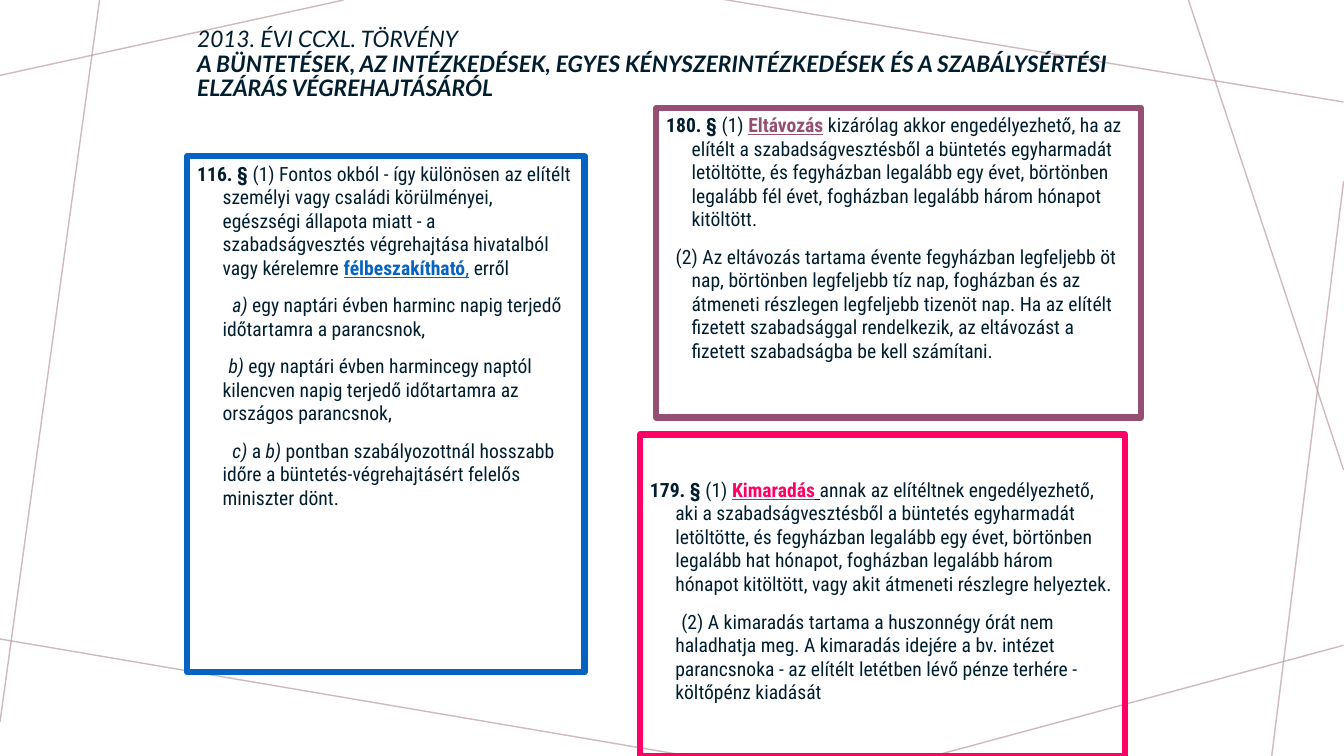
import pptx
import pptx.dml.color
import pptx.enum.shapes
import pptx.enum.text
import pptx.util
from lxml import etree
from pptx.oxml.ns import qn
from pptx.util import Cm

INK, BLUE, PLUM, PINK, ROSE = "001E2E", "0563C1", "954F72", "FF0066", "BA9CA0"
HANGING = 0.64

BACKGROUND_LINES = [
    (8.66, 0, 0, 1.9),
    (2.51, 0, 0, 18.19),
    (17.35, 19.05, -0.13, 16.08),
    (33.86, 16.26, 23.52, 19.05),
    (33.86, 4.57, 32.05, 19.05),
    (33.86, 11.84, 29.95, 0),
    (33.86, 2.57, 18.14, -0.03),
]


def rgb(color):
    return pptx.dml.color.RGBColor.from_string(color)


def add_run(p, text, font="Roboto Condensed", size=14, color=INK,
            bold=False, italic=False, underline=False):
    r = p.add_run()
    r.text = text
    f = r.font
    f.name, f.size, f.color.rgb = font, pptx.util.Pt(size), rgb(color)
    f.bold, f.italic, f.underline = bold, italic, underline


def add_background_line(s, x1, y1, x2, y2):
    line = s.shapes.add_connector(pptx.enum.shapes.MSO_CONNECTOR.STRAIGHT,
                                  Cm(x1), Cm(y1), Cm(x2), Cm(y2))
    line.line.color.rgb = rgb(ROSE)
    line.line.width = pptx.util.Pt(1)
    sp_pr = line._element.spPr
    etree.SubElement(sp_pr.find(".//" + qn("a:srgbClr")), qn("a:alpha"), val="70000")
    etree.SubElement(sp_pr, qn("a:effectLst"))


def add_title(s, first_line, act_name):
    sp = s.shapes.add_textbox(Cm(4.72), Cm(0.53), Cm(23.6), Cm(2.21))
    tf = sp.text_frame
    tf.word_wrap = True
    tf.vertical_anchor = pptx.enum.text.MSO_ANCHOR.MIDDLE
    p = tf.paragraphs[0]
    p.line_spacing = 0.9
    add_run(p, first_line, font="Lato", size=16.2, italic=True)
    p.add_line_break()
    add_run(p, act_name, font="Lato", size=16.2, italic=True, bold=True)


def add_section_box(s, left, top, width, height, color, paragraphs, inset_top=0.13):
    """Each paragraph is a first-line indent in cm and a list of (text, format) runs."""
    sp = s.shapes.add_shape(pptx.enum.shapes.MSO_SHAPE.RECTANGLE,
                            Cm(left), Cm(top), Cm(width), Cm(height))
    sp.shadow.inherit = False
    sp.fill.background()
    sp.line.color.rgb = rgb(color)
    sp.line.width = pptx.util.Pt(4.5)
    tf = sp.text_frame
    tf.word_wrap = True
    tf.vertical_anchor = pptx.enum.text.MSO_ANCHOR.TOP
    tf.margin_top = Cm(inset_top)
    for i, (indent, runs) in enumerate(paragraphs):
        p = tf.add_paragraph() if i else tf.paragraphs[0]
        p.alignment = pptx.enum.text.PP_ALIGN.LEFT
        p.space_before = pptx.util.Pt(10 if i else 0)
        p_pr = p._p.get_or_add_pPr()
        p_pr.set("marL", str(Cm(HANGING)))
        p_pr.set("indent", str(Cm(indent)))
        for text, style in runs:
            add_run(p, text, **style)


def main():
    prs = pptx.Presentation()
    prs.slide_width, prs.slide_height = Cm(33.87), Cm(19.05)
    s = prs.slides.add_slide(prs.slide_layouts[6])
    for ends in BACKGROUND_LINES:
        add_background_line(s, *ends)

    add_title(s, "2013. ÉVI CCXL. TÖRVÉNY",
              "A BÜNTETÉSEK, AZ INTÉZKEDÉSEK, EGYES KÉNYSZERINTÉZKEDÉSEK "
              "ÉS A SZABÁLYSÉRTÉSI ELZÁRÁS VÉGREHAJTÁSÁRÓL")

    plain, bold, italic = {}, {"bold": True}, {"italic": True}
    add_section_box(s, 4.72, 3.94, 10.01, 13, BLUE, [
        (-HANGING, [
            ("116. §", bold),
            (" (1) Fontos okból - így különösen az elítélt személyi vagy családi "
             "körülményei, egészségi állapota miatt - a szabadságvesztés "
             "végrehajtása hivatalból vagy kérelemre ", plain),
            ("félbeszakítható", {"color": BLUE, "bold": True, "underline": True}),
            (",", {"color": BLUE, "underline": True}),
            (" erről", plain)]),
        (0.25, [
            ("a) ", italic),
            ("egy naptári évben harminc napig terjedő időtartamra a parancsnok,", plain)]),
        (0.15, [
            ("b) ", italic),
            ("egy naptári évben harmincegy naptól kilencven napig terjedő "
             "időtartamra az országos parancsnok,", plain)]),
        (0.25, [
            ("c) ", italic),
            ("a", plain),
            (" b) ", italic),
            ("pontban szabályozottnál hosszabb időre a büntetés-végrehajtásért "
             "felelős miniszter dönt.", plain)]),
    ])
    add_section_box(s, 16.54, 2.72, 12.22, 7.8, PLUM, [
        (-HANGING, [
            ("180. §", bold),
            (" (1) ", plain),
            ("Eltávozás", {"color": PLUM, "bold": True, "underline": True}),
            (" kizárólag akkor engedélyezhető, ha az elítélt a szabadságvesztésből "
             "a büntetés egyharmadát letöltötte, és fegyházban legalább egy évet, "
             "börtönben legalább fél évet, fogházban legalább három hónapot "
             "kitöltött.", plain)]),
        (-0.4, [
            ("(2) Az eltávozás tartama évente fegyházban legfeljebb öt nap, "
             "börtönben legfeljebb tíz nap, fogházban és az átmeneti részlegen "
             "legfeljebb tizenöt nap. Ha az elítélt fizetett szabadsággal "
             "rendelkezik, az eltávozást a fizetett szabadságba be kell "
             "számítani.", plain)]),
    ])
    add_section_box(s, 16.13, 10.95, 12.22, 8.1, PINK, [
        (-HANGING, [
            ("179. §", bold),
            (" (1) ", plain),
            ("Kimaradás", {"color": PINK, "bold": True, "underline": True}),
            (" ", {"bold": True, "underline": True}),
            ("annak az elítéltnek engedélyezhető, aki a szabadságvesztésből a "
             "büntetés egyharmadát letöltötte, és fegyházban legalább egy évet, "
             "börtönben legalább hat hónapot, fogházban legalább három hónapot "
             "kitöltött, vagy akit átmeneti részlegre helyeztek.", plain)]),
        (0.15, [
            ("(2) A kimaradás tartama a huszonnégy órát nem haladhatja meg. "
             "A kimaradás idejére a bv. intézet parancsnoka - az elítélt letétben "
             "lévő pénze terhére - költőpénz kiadását", plain)]),
    ], inset_top=1.09)
    prs.save("out.pptx")


if __name__ == "__main__":
    main()
